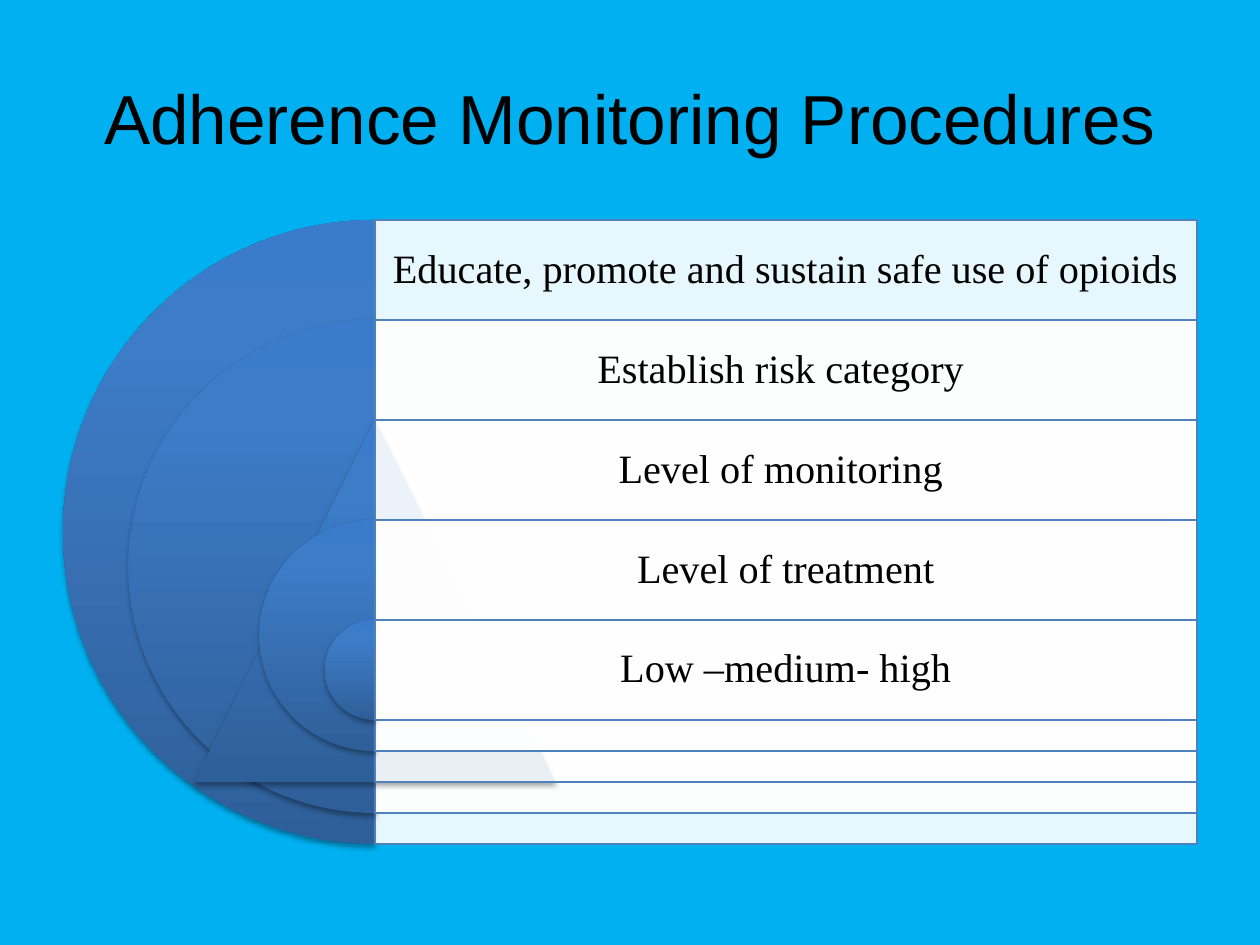
from lxml import etree
from pptx import Presentation
from pptx.dml.color import RGBColor
from pptx.enum.shapes import MSO_SHAPE
from pptx.enum.text import MSO_ANCHOR, PP_ALIGN
from pptx.oxml import parse_xml
from pptx.oxml.ns import nsdecls, qn
from pptx.util import Pt

PIE, RECT = MSO_SHAPE.PIE, MSO_SHAPE.RECTANGLE
TRIANGLE = MSO_SHAPE.ISOSCELES_TRIANGLE
MIDDLE, CENTER = MSO_ANCHOR.MIDDLE, PP_ALIGN.CENTER

SCALE = 914400 / 126
STOPS = [(0, "2F5F99"), (80, "3D7CC7"), (100, "3A7CCB")]

AXIS, TOP, WIDTH = 375, 220, 822
BAND, SIZE, SHRINK = 100, 624, 131
STEPS = [
    (PIE, "Educate, promote and sustain safe use of opioids"),
    (PIE, "Establish risk category "),
    (TRIANGLE, "Level of monitoring "),
    (PIE, "Level of treatment"),
    (PIE, "Low –medium- high"),
]


def px(*values):
    return [round(v * SCALE) for v in values]


def rgb(code):
    return RGBColor.from_string(code)


def add_text(shapes, box, text, font, size, spacing=1.0):
    frame = shapes.add_textbox(*px(*box)).text_frame
    frame.word_wrap = True
    frame.vertical_anchor = MIDDLE
    frame.text = text
    para = frame.paragraphs[0]
    para.alignment = CENTER
    para.line_spacing = spacing
    style = para.runs[0].font
    style.name, style.size = font, Pt(size)
    style.color.rgb = rgb("000000")
    return frame


def add_disc(shapes, kind, box):
    """Add a half disc or triangle with an upward gradient and a soft shadow."""
    disc = shapes.add_shape(kind, *px(*box))
    if kind == PIE:
        disc.adjustments[0], disc.adjustments[1] = 54, 162
    disc.line.fill.background()
    disc.shadow.inherit = False
    props = disc.fill._xPr
    stops = "".join(
        f'<a:gs pos="{pos * 1000}"><a:srgbClr val="{code}"/></a:gs>'
        for pos, code in STOPS)
    props.find(qn("a:prstGeom")).addnext(parse_xml(
        f'<a:gradFill {nsdecls("a")} rotWithShape="1"><a:gsLst>{stops}</a:gsLst>'
        '<a:lin ang="16200000" scaled="0"/></a:gradFill>'))
    props.find(qn("a:effectLst")).append(parse_xml(
        f'<a:outerShdw {nsdecls("a")} blurRad="{Pt(3.1)}" dist="{Pt(1.8)}" '
        'dir="5400000" rotWithShape="0"><a:srgbClr val="000000">'
        '<a:alpha val="35000"/></a:srgbClr></a:outerShdw>'))


def add_panel(shapes, box):
    """Add a slightly see-through white panel."""
    panel = shapes.add_shape(RECT, *px(*box))
    panel.shadow.inherit = False
    panel.fill.solid()
    panel.fill.fore_color.rgb = rgb("FFFFFF")
    color = panel.fill._xPr.find(qn("a:solidFill"))[0]
    etree.SubElement(color, qn("a:alpha"), val="90000")
    panel.line.color.rgb = rgb("4F81BD")
    panel.line.width = Pt(0.75)


def add_target(shapes):
    for i, (kind, text) in enumerate(STEPS):
        top, size = TOP + i * BAND, SIZE - i * SHRINK
        add_disc(shapes, kind, (AXIS - size / 2, top, size, size))
        add_panel(shapes, (AXIS, top, WIDTH, size))
        frame = add_text(shapes, (AXIS, top, WIDTH, BAND), text,
                         "Times New Roman", 23, 0.9)
        inset = px(12.6)[0]
        frame.margin_left = frame.margin_right = inset
        frame.margin_top = frame.margin_bottom = inset


def main():
    deck = Presentation()
    deck.slide_width, deck.slide_height = px(1260, 945)
    slide = deck.slides.add_slide(deck.slide_layouts[6])
    slide.background.fill.solid()
    slide.background.fill.fore_color.rgb = rgb("00B0F0")
    add_text(slide.shapes, (63, 38, 1134, 158),
             "Adherence Monitoring Procedures", "Arial", 39.6)
    add_target(slide.shapes.add_group_shape().shapes)
    deck.save("out.pptx")


if __name__ == "__main__":
    main()
